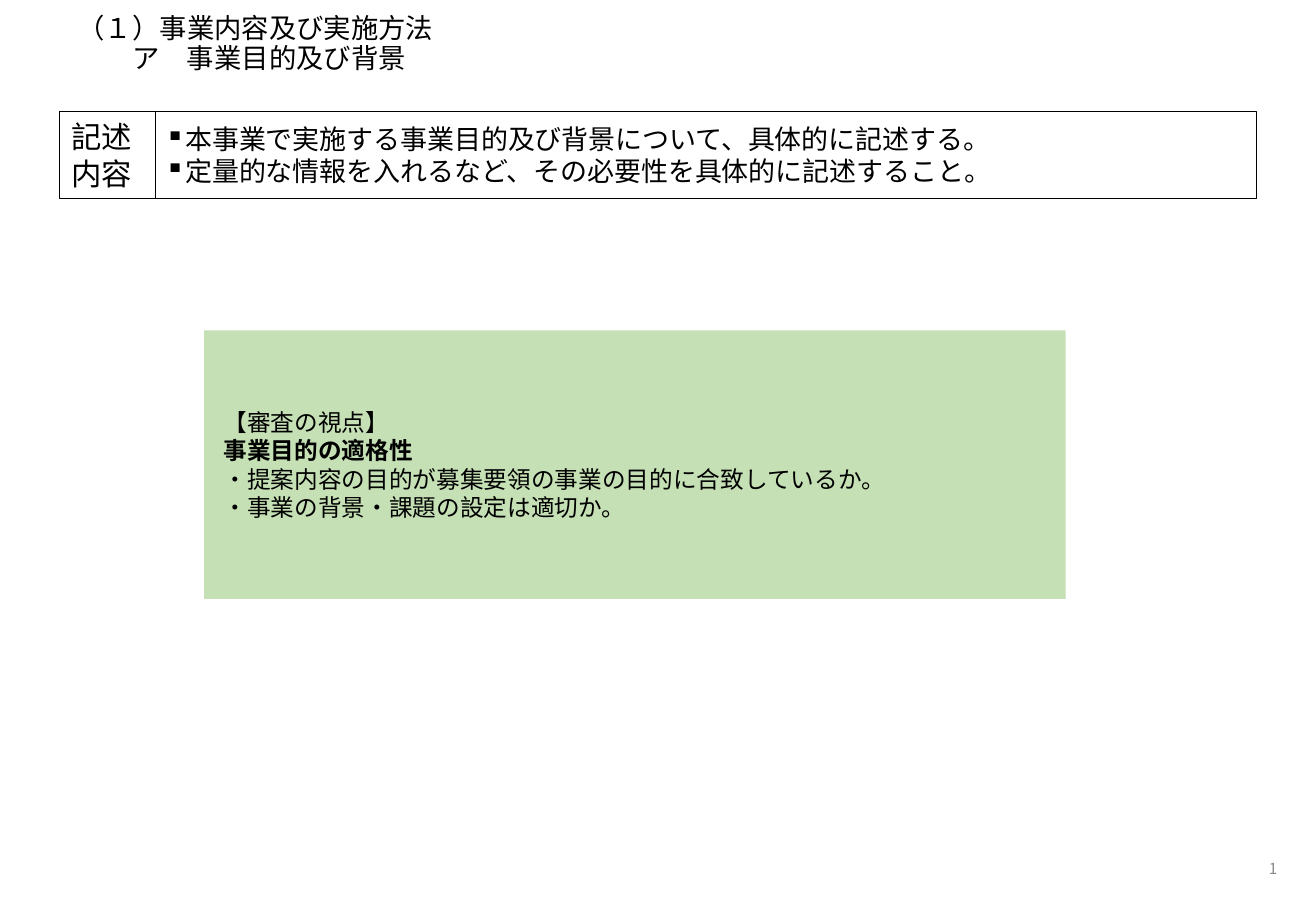
from lxml.etree import SubElement
from pptx import Presentation
from pptx.dml.color import RGBColor
from pptx.enum.shapes import MSO_SHAPE
from pptx.enum.text import MSO_ANCHOR, PP_ALIGN
from pptx.oxml.ns import qn
from pptx.util import Inches, Pt

FONT = "Noto Sans CJK JP"


def color(code):
    return RGBColor.from_string(code)


def write(shape, lines, size, pad, ink="000000"):
    """Fill a shape with one paragraph per line and return the paragraphs."""
    frame = shape.text_frame
    frame.word_wrap = True
    frame.vertical_anchor = MSO_ANCHOR.MIDDLE
    (frame.margin_left, frame.margin_top,
     frame.margin_right, frame.margin_bottom) = [Inches(n) for n in pad]
    for i, line in enumerate(lines):
        para = frame.paragraphs[0] if i == 0 else frame.add_paragraph()
        para.alignment = PP_ALIGN.LEFT
        run = para.add_run()
        run.text = line
        run.font.name = FONT
        run.font.size = Pt(size)
        run.font.color.rgb = color(ink)
        SubElement(run.font._element, qn("a:ea"), typeface=FONT)
    return frame.paragraphs


deck = Presentation()
deck.slide_width, deck.slide_height = Inches(10.83), Inches(7.5)
slide = deck.slides.add_slide(deck.slide_layouts[6])
shapes = slide.shapes
PAD = (0.1, 0.05, 0.1, 0.05)

# Title, second line set in by two characters
title = shapes.add_textbox(Inches(0.54), Inches(0.09), Inches(9.75), Inches(0.55))
heads = write(title, ["（１）事業内容及び実施方法", "ア　事業目的及び背景"], 16.2, PAD)
for para in heads:
    para.line_spacing = 0.9
heads[1]._p.get_or_add_pPr().set("marL", str(Inches(0.45)))

# Framed row: label and what to describe
notes = ["本事業で実施する事業目的及び背景について、具体的に記述する。",
         "定量的な情報を入れるなど、その必要性を具体的に記述すること。"]
cells = [(1.28, 9.06, notes, 16, (0.08, 0, 0.04, 0)),
         (0.49, 0.79, ["記述内容"], 18, PAD)]
for left, width, lines, size, pad in cells:
    cell = shapes.add_shape(MSO_SHAPE.RECTANGLE, Inches(left), Inches(0.92),
                            Inches(width), Inches(0.71))
    cell.shadow.inherit = False
    cell.fill.solid()
    cell.fill.fore_color.rgb = color("FFFFFF")
    cell.line.color.rgb = color("000000")
    cell.line.width = Pt(0.5)
    paras = write(cell, lines, size, pad)
    if lines is notes:
        for para in paras:
            props = para._p.get_or_add_pPr()
            props.set("marL", str(Inches(0.16)))
            props.set("indent", str(Inches(-0.16)))
            SubElement(props, qn("a:buChar"), char="▪")

# Green panel with the review points
panel = shapes.add_shape(MSO_SHAPE.OCTAGON, Inches(1.68), Inches(2.72),
                         Inches(7.09), Inches(2.21))
panel.adjustments[0] = 0
panel.shadow.inherit = False
panel.fill.solid()
panel.fill.fore_color.rgb = color("C5E0B4")
panel.line.fill.background()
points = write(panel, ["【審査の視点】", "事業目的の適格性",
                       "・提案内容の目的が募集要領の事業の目的に合致しているか。",
                       "・事業の背景・課題の設定は適切か。"], 14, (0.16, 0, 0, 0))
points[1].runs[0].font.bold = True

# Page number
page = shapes.add_textbox(Inches(8.17), Inches(6.95), Inches(2.44), Inches(0.4))
write(page, ["1"], 9, PAD, "898989")[0].alignment = PP_ALIGN.RIGHT

deck.save("out.pptx")
